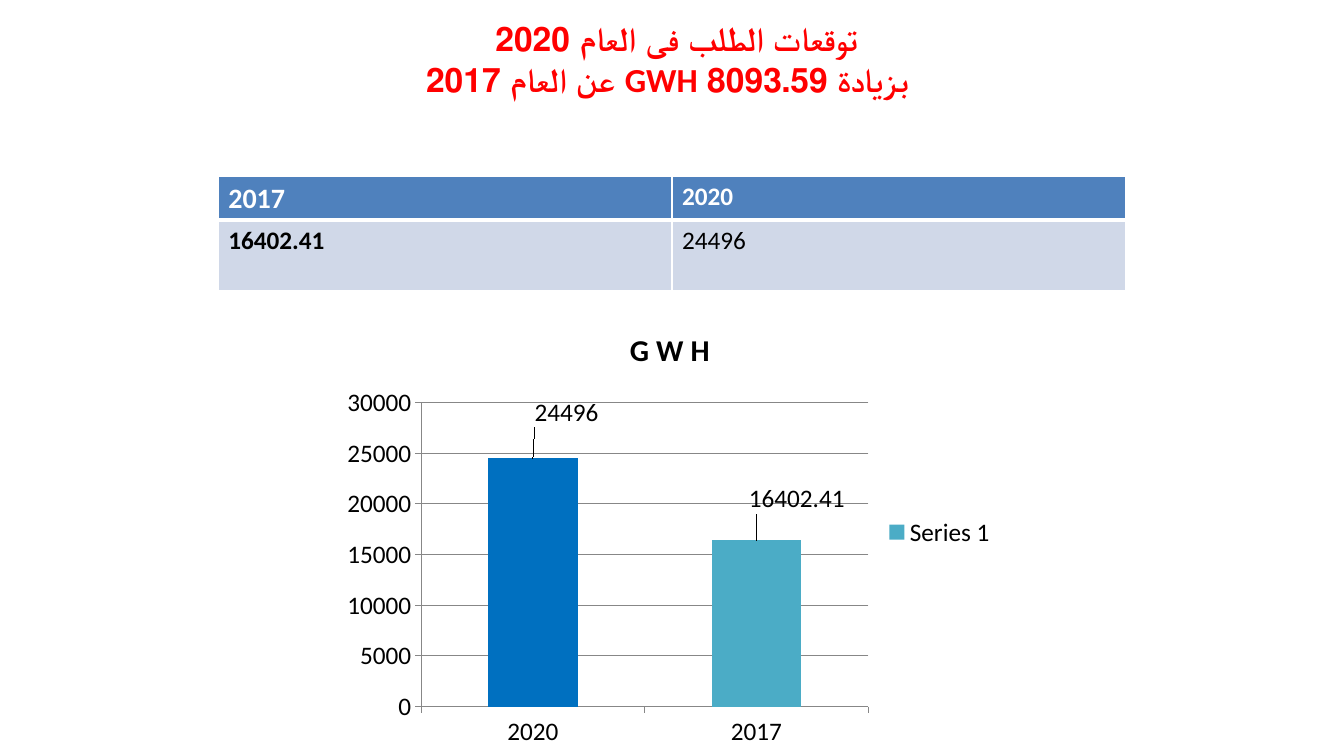
"""Build the slide comparing electricity demand in 2017 with the 2020 forecast."""
import lxml.etree
import pptx
import pptx.chart.data
import pptx.dml.color
import pptx.enum.chart
import pptx.enum.text
import pptx.oxml
import pptx.oxml.ns
import pptx.util

RGBColor = pptx.dml.color.RGBColor
RED = RGBColor(0xFF, 0x00, 0x00)
WHITE = RGBColor(0xFF, 0xFF, 0xFF)
BLACK = RGBColor(0x00, 0x00, 0x00)
HEADER_BLUE = RGBColor(0x4F, 0x81, 0xBD)
BAND_BLUE = RGBColor(0xD0, 0xD8, 0xE8)
FORECAST_BLUE = RGBColor(0x00, 0x70, 0xC0)
SERIES_TEAL = RGBColor(0x4B, 0xAC, 0xC6)
GRID_GREY = RGBColor(0x87, 0x87, 0x87)

FONT = "Calibri"
WIDTH, HEIGHT = 13.33, 7.5
TITLE = ("توقعات الطلب فى العام 2020 ", " بزيادة 8093.59 GWH عن العام 2017")
TABLE = [
    {"height": 0.43, "fill": HEADER_BLUE, "color": WHITE, "rule": 3,
     "cells": [("2017", 20, True), ("2020", 18, True)]},
    {"height": 0.7, "fill": BAND_BLUE, "color": BLACK, "rule": 1,
     "cells": [("16402.41", 18, True), ("24496", 18, False)]},
]
DEMAND = {"2020": 24496, "2017": 16402.41}
LABEL_SHIFTS = [(0.05, -0.06), (0.06, -0.05)]
PLOT_AREA = {"x": 0.13, "y": 0.21, "w": 0.665, "h": 0.68}
COLUMN_WIDTH = 4.5
CHART_WIDTH, CHART_TOP = 6.67, 3.06


def inches(*lengths):
    return [pptx.util.Inches(length) for length in lengths]


def set_font(font, size=18, color=BLACK, bold=False):
    font.name, font.size, font.bold = FONT, pptx.util.Pt(size), bold
    font.color.rgb = color


def write(para, text, **style):
    span = para.add_run()
    span.text = text
    set_font(span.font, **style)


def add_title(page, left, width):
    box = page.shapes.add_textbox(*inches(left, 0, width, 1.55))
    frame = box.text_frame
    frame.word_wrap = True
    frame.vertical_anchor = pptx.enum.text.MSO_ANCHOR.TOP
    frame.margin_top = pptx.util.Inches(0.18)
    para = frame.paragraphs[0]
    para.alignment = pptx.enum.text.PP_ALIGN.CENTER
    para._p.get_or_add_pPr().set("rtl", "1")
    for number, line in enumerate(TITLE):
        if number:
            para.add_line_break()
        write(para, line, size=24, color=RED, bold=True)


def add_borders(cell, rules):
    properties = cell._tc.get_or_add_tcPr()
    for place, (side, points) in enumerate(rules.items()):
        properties.insert(place, pptx.oxml.parse_xml(
            f'<a:ln{side} {pptx.oxml.ns.nsdecls("a")} w="{pptx.util.Pt(points)}">'
            f'<a:solidFill><a:srgbClr val="{WHITE}"/></a:solidFill></a:ln{side}>'))


def add_demand_table(page, left, width):
    height = sum(row["height"] for row in TABLE)
    columns = len(TABLE[0]["cells"])
    table = page.shapes.add_table(
        len(TABLE), columns, *inches(left, 1.75, width, height)).table
    above = 1
    for r, row in enumerate(TABLE):
        table.rows[r].height = pptx.util.Inches(row["height"])
        for c, (text, size, bold) in enumerate(row["cells"]):
            cell = table.cell(r, c)
            cell.fill.solid()
            cell.fill.fore_color.rgb = row["fill"]
            add_borders(cell, {"L": 1, "R": 1, "T": above, "B": row["rule"]})
            write(cell.text_frame.paragraphs[0], text,
                  size=size, color=row["color"], bold=bold)
        above = row["rule"]


def add_layout(parent, place, **values):
    layout = pptx.oxml.parse_xml(
        f'<c:layout {pptx.oxml.ns.nsdecls("c")}><c:manualLayout/></c:layout>')
    for name, value in values.items():
        entry = lxml.etree.SubElement(layout[0], pptx.oxml.ns.qn(f"c:{name}"))
        entry.set("val", str(value))
    parent.insert(place, layout)


def style_axis(axis):
    axis.format.line.color.rgb = GRID_GREY
    axis.major_tick_mark = pptx.enum.chart.XL_TICK_MARK.OUTSIDE
    set_font(axis.tick_labels.font)


def add_demand_chart(page):
    data = pptx.chart.data.CategoryChartData()
    data.categories = list(DEMAND)
    data.add_series("Series 1", list(DEMAND.values()))
    chart = page.shapes.add_chart(
        pptx.enum.chart.XL_CHART_TYPE.COLUMN_CLUSTERED,
        *inches((WIDTH - CHART_WIDTH) / 2 - 0.02, CHART_TOP, CHART_WIDTH, HEIGHT - CHART_TOP),
        data).chart
    set_font(chart.font)
    chart.has_title = True
    write(chart.chart_title.text_frame.paragraphs[0], "G W H", size=21.6, bold=True)
    chart.has_legend = True
    chart.legend.position = pptx.enum.chart.XL_LEGEND_POSITION.RIGHT
    chart.legend.include_in_layout = False
    set_font(chart.legend.font)

    style_axis(chart.category_axis)
    style_axis(chart.value_axis)
    scale = chart.value_axis
    scale.minimum_scale, scale.maximum_scale, scale.major_unit = 0, 30000, 5000
    scale.has_major_gridlines = True
    scale.major_gridlines.format.line.color.rgb = GRID_GREY

    plot = chart.plots[0]
    plot.gap_width = 150
    plot.vary_by_categories = False
    series = plot.series[0]
    series.format.fill.solid()
    series.format.fill.fore_color.rgb = SERIES_TEAL
    forecast = series.points[0].format.fill
    forecast.solid()
    forecast.fore_color.rgb = FORECAST_BLUE
    series.data_labels.show_value = True
    set_font(series.data_labels.font)
    for number in range(len(DEMAND)):
        label = series.points[number].data_label
        label.position = pptx.enum.chart.XL_LABEL_POSITION.OUTSIDE_END
    labels = series._element.iter(pptx.oxml.ns.qn("c:dLbl"))
    for label, (x, y) in zip(list(labels), LABEL_SHIFTS):
        add_layout(label, 1, x=x, y=y)

    area = chart._chartSpace.chart.plotArea
    for layout in area.findall(pptx.oxml.ns.qn("c:layout")):
        area.remove(layout)
    add_layout(area, 0, layoutTarget="inner", xMode="edge", yMode="edge", **PLOT_AREA)


def main():
    deck = pptx.Presentation()
    deck.slide_width, deck.slide_height = inches(WIDTH, HEIGHT)
    page = deck.slides.add_slide(deck.slide_layouts[6])
    width = COLUMN_WIDTH * len(TABLE[0]["cells"])
    left = (WIDTH - width) / 2
    add_title(page, left, width)
    add_demand_table(page, left, width)
    add_demand_chart(page)
    deck.save("out.pptx")


if __name__ == "__main__":
    main()
